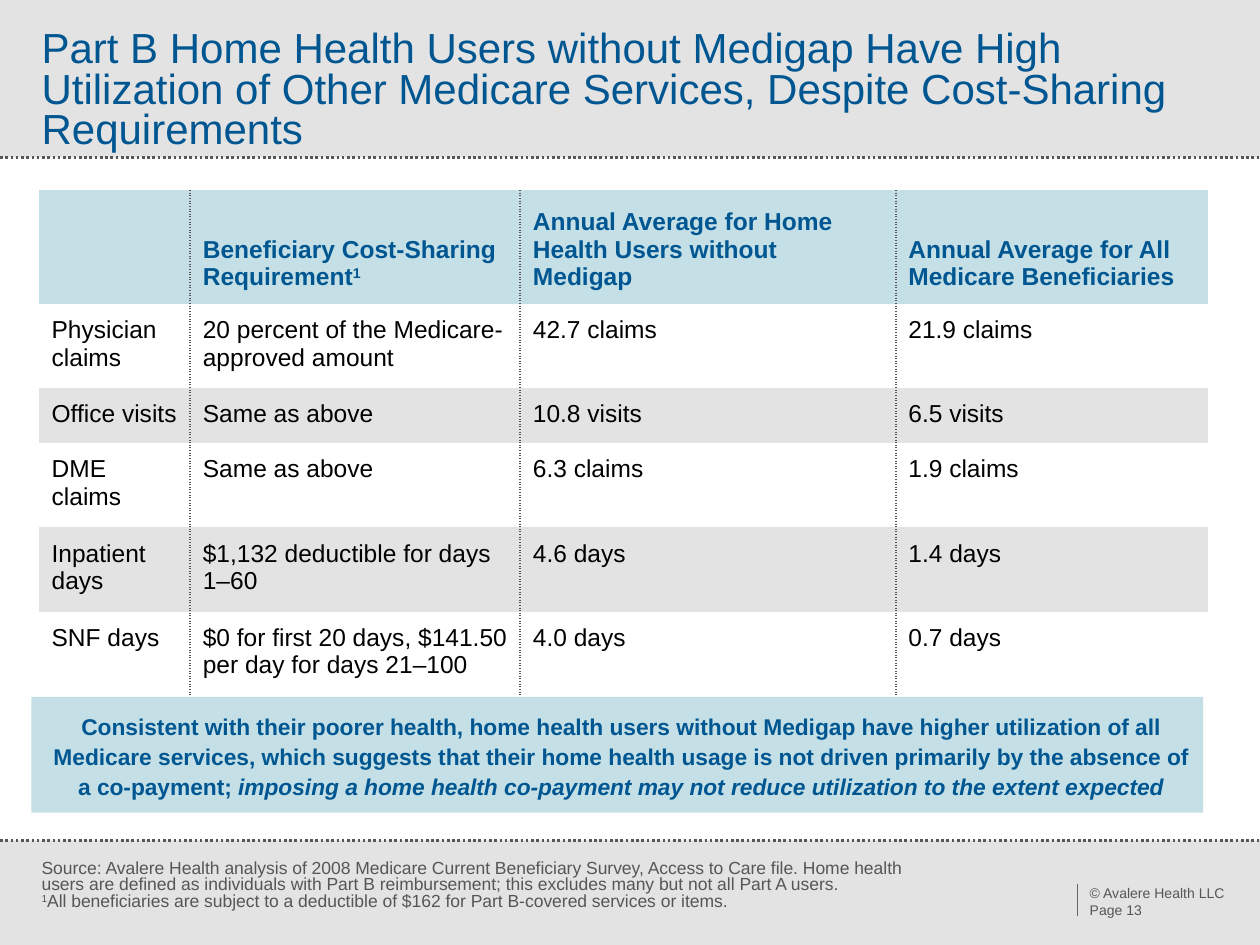
from lxml import etree
from pptx import Presentation
from pptx import util as u
from pptx.dml.color import RGBColor
from pptx.enum import dml, shapes, text
from pptx.oxml import parse_xml
from pptx.oxml.ns import nsdecls, qn

BLUE = RGBColor(0x00, 0x56, 0x91)
PALE_BLUE = RGBColor(0xC4, 0xE0, 0xE6)
PALE_GRAY = RGBColor(0xE3, 0xE3, 0xE3)
DARK_GRAY = RGBColor(0x56, 0x56, 0x56)
RULE_GRAY = RGBColor(0x66, 0x66, 0x66)
BLACK = RGBColor(0x00, 0x00, 0x00)

NO_GRID = "{2D5ABB26-0587-4C30-8999-92F81FD0307C}"
COLS = [1.2, 2.62, 2.98, 2.48]
ROWS = [0.9, 0.67, 0.43, 0.67, 0.67, 0.67]
DATA = [
    ["", "Beneficiary Cost-Sharing Requirement^1",
     "Annual Average for Home Health Users without Medigap",
     "Annual Average for All Medicare Beneficiaries"],
    ["Physician claims", "20 percent of the Medicare-approved amount", "42.7 claims", "21.9 claims"],
    ["Office visits", "Same as above", "10.8 visits", "6.5 visits"],
    ["DME claims", "Same as above", "6.3 claims", "1.9 claims"],
    ["Inpatient days", "$1,132 deductible for days 1–60", "4.6 days", "1.4 days"],
    ["SNF days", "$0 for first 20 days, $141.50 per day for days 21–100", "4.0 days", "0.7 days"],
]


def set_margins(tf, left=0, top=0, right=0, bottom=0):
    tf.margin_left, tf.margin_top = u.Inches(left), u.Inches(top)
    tf.margin_right, tf.margin_bottom = u.Inches(right), u.Inches(bottom)


def format_font(p, size, color, bold=False):
    f = p.font
    f.name, f.size, f.bold = "Arial", u.Pt(size), bold
    f.color.rgb = color


def add_superscript(p, mark):
    r = p.add_run()
    r.text = mark
    r._r.get_or_add_rPr().set("baseline", "30000")


def add_rect(s, x, y, w, h, color):
    sp = s.shapes.add_shape(shapes.MSO_SHAPE.RECTANGLE,
                            u.Inches(x), u.Inches(y), u.Inches(w), u.Inches(h))
    sp.shadow.inherit = False
    sp.fill.solid()
    sp.fill.fore_color.rgb = color
    sp.line.fill.background()
    return sp


def add_line(s, x1, y1, x2, y2, color, width, dash=None):
    ln = s.shapes.add_connector(shapes.MSO_CONNECTOR.STRAIGHT,
                                u.Inches(x1), u.Inches(y1), u.Inches(x2), u.Inches(y2))
    ln.line.color.rgb = color
    ln.line.width = u.Pt(width)
    if dash:
        ln.line.dash_style = dash
    etree.SubElement(ln._element.spPr, qn("a:effectLst"))


def add_text(s, x, y, w, h):
    tf = s.shapes.add_textbox(u.Inches(x), u.Inches(y), u.Inches(w), u.Inches(h)).text_frame
    tf.word_wrap = True
    return tf


def add_band(s, x, y, w, h, rule_y):
    add_rect(s, x, y, w, h, PALE_GRAY)
    add_line(s, x, rule_y, x + w, rule_y, DARK_GRAY, 1.5, dml.MSO_LINE.ROUND_DOT)


def add_header(s, x, y, w, h):
    add_band(s, x, y, w, h, y + h)
    title = s.shapes.title
    title.left, title.top = u.Inches(x + 0.33), u.Inches(y + 0.25)
    title.width, title.height = u.Inches(w - 0.67), u.Inches(h - 0.28)
    tf = title.text_frame
    tf.auto_size = text.MSO_AUTO_SIZE.NONE
    tf.vertical_anchor = text.MSO_ANCHOR.TOP
    tf.word_wrap = True
    set_margins(tf)
    p = tf.paragraphs[0]
    p.text = ("Part B Home Health Users without Medigap Have High Utilization of "
              "Other Medicare Services, Despite Cost-Sharing Requirements")
    p.alignment = text.PP_ALIGN.LEFT
    p.line_spacing = 0.8
    format_font(p, 24, BLUE)


def add_footer(s, x, y, w, h):
    add_band(s, x, y, w, h, y)
    tf = add_text(s, x + 0.33, y + 0.16, 7.08, 0.4)
    set_margins(tf)
    source, note = tf.paragraphs[0], tf.add_paragraph()
    source.text = ("Source: Avalere Health analysis of 2008 Medicare Current Beneficiary Survey, "
                   "Access to Care file. Home health users are defined as individuals with Part B "
                   "reimbursement; this excludes many but not all Part A users.")
    add_superscript(note, "1")
    note.add_run().text = ("All beneficiaries are subject to a deductible of $162 "
                           "for Part B-covered services or items.")
    for p in (source, note):
        p.line_spacing = 0.8
        format_font(p, 10, DARK_GRAY)

    mark_x, mark_y = x + 8.55, y + 0.35
    add_line(s, mark_x, mark_y, mark_x, mark_y + 0.25, RULE_GRAY, 0.5)
    tf = add_text(s, mark_x, mark_y, 1.33, 0.32)
    set_margins(tf, 0.1, 0, 0.1, 0.05)
    p = tf.paragraphs[0]
    p.text = "© Avalere Health LLC\vPage 13"
    format_font(p, 8, DARK_GRAY)


def add_cell_border(cell, side, position):
    ln = parse_xml(
        f'<a:{side} {nsdecls("a")} w="19050"><a:solidFill><a:srgbClr val="{DARK_GRAY}"/>'
        f'</a:solidFill><a:prstDash val="sysDot"/></a:{side}>')
    cell._tc.get_or_add_tcPr().insert(position, ln)


def fill_cell(cell, content, row, col):
    header = row == 0
    if header or row % 2 == 0:
        cell.fill.solid()
        cell.fill.fore_color.rgb = PALE_BLUE if header else PALE_GRAY
    else:
        cell.fill.background()
    set_margins(cell, 0.1, 0.1, 0.1, 0.1)
    cell.vertical_anchor = text.MSO_ANCHOR.BOTTOM if header else text.MSO_ANCHOR.TOP
    p = cell.text_frame.paragraphs[0]
    words, _, mark = content.partition("^")
    if words:
        p.add_run().text = words
    if mark:
        add_superscript(p, mark)
    format_font(p, 14, BLUE if header else BLACK, header)
    sides = ["lnL"] * (col > 0) + ["lnR"] * (col < len(COLS) - 1)
    for position, side in enumerate(sides):
        add_cell_border(cell, side, position)


def add_usage_table(s, x, y):
    frame = s.shapes.add_table(len(ROWS), len(COLS), u.Inches(x), u.Inches(y),
                               u.Inches(sum(COLS)), u.Inches(sum(ROWS)))
    table = frame.table
    table.horz_banding = False
    table._tbl.tblPr.find(qn("a:tableStyleId")).text = NO_GRID
    for column, width in zip(table.columns, COLS):
        column.width = u.Inches(width)
    for i, (height, values) in enumerate(zip(ROWS, DATA)):
        table.rows[i].height = u.Inches(height)
        for j, content in enumerate(values):
            fill_cell(table.cell(i, j), content, i, j)


def add_takeaway(s, x, y, w, h):
    tf = add_rect(s, x, y, w, h, PALE_BLUE).text_frame
    tf.word_wrap = True
    tf.vertical_anchor = text.MSO_ANCHOR.MIDDLE
    set_margins(tf, 0.15, 0.1, 0.1, 0.1)
    p = tf.paragraphs[0]
    p.alignment = text.PP_ALIGN.CENTER
    p.line_spacing = 1.1
    p.add_run().text = ("Consistent with their poorer health, home health users without Medigap have "
                        "higher utilization of all Medicare services, which suggests that their home "
                        "health usage is not driven primarily by the absence of a co-payment; ")
    r = p.add_run()
    r.text = "imposing a home health co-payment may not reduce utilization to the extent expected"
    r.font.italic = True
    format_font(p, 13, BLUE, True)


def main():
    prs = Presentation()
    prs.slide_width, prs.slide_height = u.Inches(10), u.Inches(7.5)
    s = prs.slides.add_slide(prs.slide_layouts[5])
    add_header(s, 0, 0, 10, 1.25)
    add_footer(s, 0, 6.67, 10, 0.83)
    add_usage_table(s, 0.31, 1.51)
    add_takeaway(s, 0.25, 5.53, 9.3, 0.92)
    title = s.shapes.title._element
    s.shapes._spTree.remove(title)
    s.shapes._spTree.append(title)
    prs.save("out.pptx")


if __name__ == "__main__":
    main()
